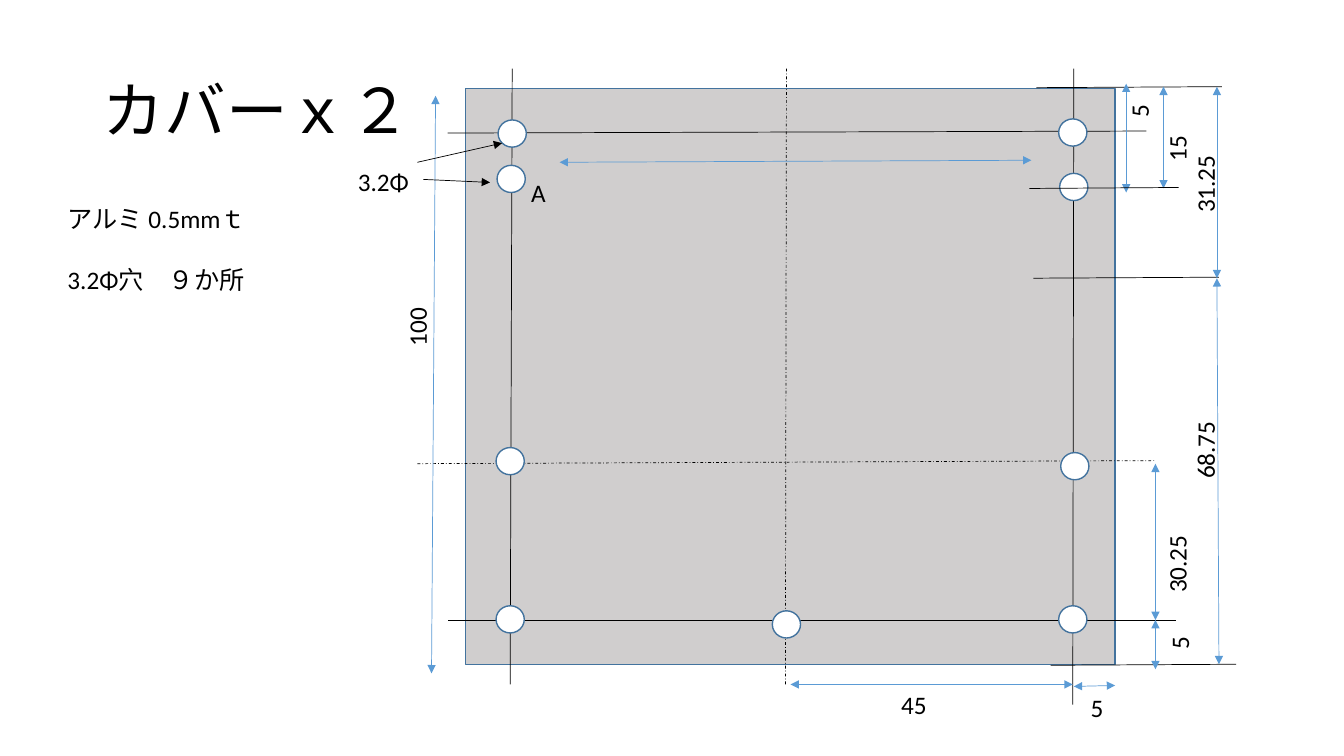
from pptx import Presentation
from pptx.dml.color import RGBColor
from pptx.enum.dml import MSO_LINE
from pptx.enum.shapes import MSO_CONNECTOR, MSO_SHAPE
from pptx.enum.text import MSO_ANCHOR, MSO_AUTO_SIZE, PP_ALIGN
from pptx.oxml.ns import qn
from pptx.util import Inches, Pt
from lxml import etree

STRAIGHT = MSO_CONNECTOR.STRAIGHT
RECTANGLE, OVAL = MSO_SHAPE.RECTANGLE, MSO_SHAPE.OVAL
DASH_DOT = MSO_LINE.DASH_DOT
LEFT, MIDDLE = PP_ALIGN.LEFT, MSO_ANCHOR.MIDDLE
FIT_SHAPE = MSO_AUTO_SIZE.SHAPE_TO_FIT_TEXT
TITLE_ONLY = 5


def color(hex_string):
    """Turn a hex string into a colour."""
    return RGBColor.from_string(hex_string)


class Drawing:
    """Style and current slide of a dimensioned plate drawing."""

    font = "Calibri"
    ink, dimension_ink, outline = "000000", "5B9BD5", "43739E"
    plate_fill, hole_fill = "D0CECE", "FFFFFF"
    label_height = 0.4
    hole_width, hole_height = 0.28, 0.27

    def __init__(self, slide):
        """Keep the slide to draw on."""
        self.slide = slide

    def format_text(self, text_frame, size):
        """Apply font, size, colour and left alignment to all text."""
        for paragraph in text_frame.paragraphs:
            paragraph.alignment = LEFT
            for run in paragraph.runs:
                run.font.name = self.font
                run.font.size = Pt(size)
                run.font.color.rgb = color(self.ink)

    def title(self, text, left, top, width, height):
        """Place and format the title placeholder."""
        title = self.slide.shapes.title
        title.left, title.top = Inches(left), Inches(top)
        title.width, title.height = Inches(width), Inches(height)
        title.text_frame.text = text
        title.text_frame.vertical_anchor = MIDDLE
        title.text_frame.paragraphs[0].line_spacing = 0.9
        self.format_text(title.text_frame, 44)

    def text(self, text, left, top, width, height=label_height,
             rotation=0, wrap=False):
        """Add a text box and return its text frame."""
        box = self.slide.shapes.add_textbox(
            Inches(left), Inches(top), Inches(width), Inches(height))
        box.rotation = rotation
        text_frame = box.text_frame
        text_frame.text = text
        text_frame.word_wrap = wrap
        text_frame.auto_size = FIT_SHAPE
        self.format_text(text_frame, 18)
        return text_frame

    def shape(self, kind, left, top, width, height, fill):
        """Add an outlined, filled preset shape."""
        shape = self.slide.shapes.add_shape(
            kind, Inches(left), Inches(top), Inches(width), Inches(height))
        shape.shadow.inherit = False
        shape.fill.solid()
        shape.fill.fore_color.rgb = color(fill)
        shape.line.color.rgb = color(self.outline)
        shape.line.width = Pt(1)

    def hole(self, left, top):
        """Add one drilled hole."""
        self.shape(OVAL, left, top, self.hole_width, self.hole_height,
                   self.hole_fill)

    def line(self, x1, y1, x2, y2, ink=ink, dash=None, arrows=()):
        """Add a thin line with arrowheads at the named ends."""
        connector = self.slide.shapes.add_connector(
            STRAIGHT, Inches(x1), Inches(y1), Inches(x2), Inches(y2))
        connector.line.color.rgb = color(ink)
        connector.line.width = Pt(0.5)
        if dash is not None:
            connector.line.dash_style = dash
        properties = connector.element.spPr
        for end in arrows:
            etree.SubElement(properties.find(qn("a:ln")), qn("a:" + end),
                             type="triangle")
        etree.SubElement(properties, qn("a:effectLst"))

    def dimension(self, x1, y1, x2, y2):
        """Add a dimension line with arrowheads at both ends."""
        self.line(x1, y1, x2, y2, self.dimension_ink,
                  arrows=("headEnd", "tailEnd"))

    def leader(self, x1, y1, x2, y2):
        """Add a leader arrow pointing at a hole."""
        self.line(x1, y1, x2, y2, arrows=("tailEnd",))


presentation = Presentation()
presentation.slide_width, presentation.slide_height = Inches(13.33), Inches(7.5)
drawing = Drawing(presentation.slides.add_slide(
    presentation.slide_layouts[TITLE_ONLY]))

drawing.title("カバーｘ２", 0.92, 0.4, 11.5, 1.45)
material = drawing.text("アルミ 0.5mmｔ\n3.2Φ穴　９か所", 0.57, 1.97, 2.41, 1.01,
                        wrap=True)
material.paragraphs[1].space_before = Pt(22)

drawing.shape(RECTANGLE, 4.62, 0.88, 6.44, 5.71, drawing.plate_fill)

hole_axes = [
    (10.65, 0.68, 10.64, 6.99), (5.08, 0.68, 5.06, 6.79),
    (11.37, 1.3, 4.44, 1.32), (11.66, 6.15, 4.44, 6.15),
]
extension_lines = [
    (12.12, 0.86, 10.28, 0.87), (12.09, 2.75, 10.25, 2.76),
    (12.26, 6.59, 10.42, 6.6),
]
for ends in hole_axes + extension_lines:
    drawing.line(*ends)

center_lines = [(4.14, 4.6, 11.46, 4.57), (7.8, 0.68, 7.79, 6.79)]
for ends in center_lines:
    drawing.line(*ends, dash=DASH_DOT)

dimensions = [
    (11.46, 4.6, 11.46, 6.15), (11.46, 6.15, 11.46, 6.64),
    (7.84, 6.79, 10.64, 6.79), (10.65, 6.81, 11.06, 6.8),
    (4.32, 0.95, 4.28, 6.68), (5.55, 1.61, 10.23, 1.59),
    (11.17, 0.83, 11.17, 1.91), (11.54, 0.86, 11.54, 1.87),
    (12.07, 0.86, 12.07, 2.76), (12.07, 2.76, 12.09, 6.59),
]
for ends in dimensions:
    drawing.dimension(*ends)

holes = [
    (4.94, 1.19), (4.93, 1.64), (4.92, 4.44), (4.92, 6.01), (7.66, 6.06),
    (10.5, 1.18), (10.51, 1.72), (10.52, 4.49), (10.5, 6.01),
]
for position in holes:
    drawing.hole(*position)
drawing.line(11.69, 1.86, 10.21, 1.87)

for ends in [(4.14, 1.61, 4.98, 1.42), (4.2, 1.78, 4.86, 1.81)]:
    drawing.leader(*ends)

upright_labels = [
    ("100", 3.84, 3.04, 0.59), ("5", 11.13, 0.9, 0.33),
    ("15", 11.44, 1.27, 0.46), ("31.25", 11.56, 1.62, 0.78),
    ("68.75", 11.56, 4.26, 0.78), ("30.25", 11.28, 5.39, 0.78),
    ("5", 11.53, 6.18, 0.33),
]
for label in upright_labels:
    drawing.text(*label, rotation=270)

level_labels = [
    ("45", 8.84, 6.79, 0.46), ("5", 10.72, 6.82, 0.33),
    ("A", 5.17, 1.71, 0.35), ("3.2Φ", 3.45, 1.6, 0.71),
]
for label in level_labels:
    drawing.text(*label)

presentation.save("out.pptx")
